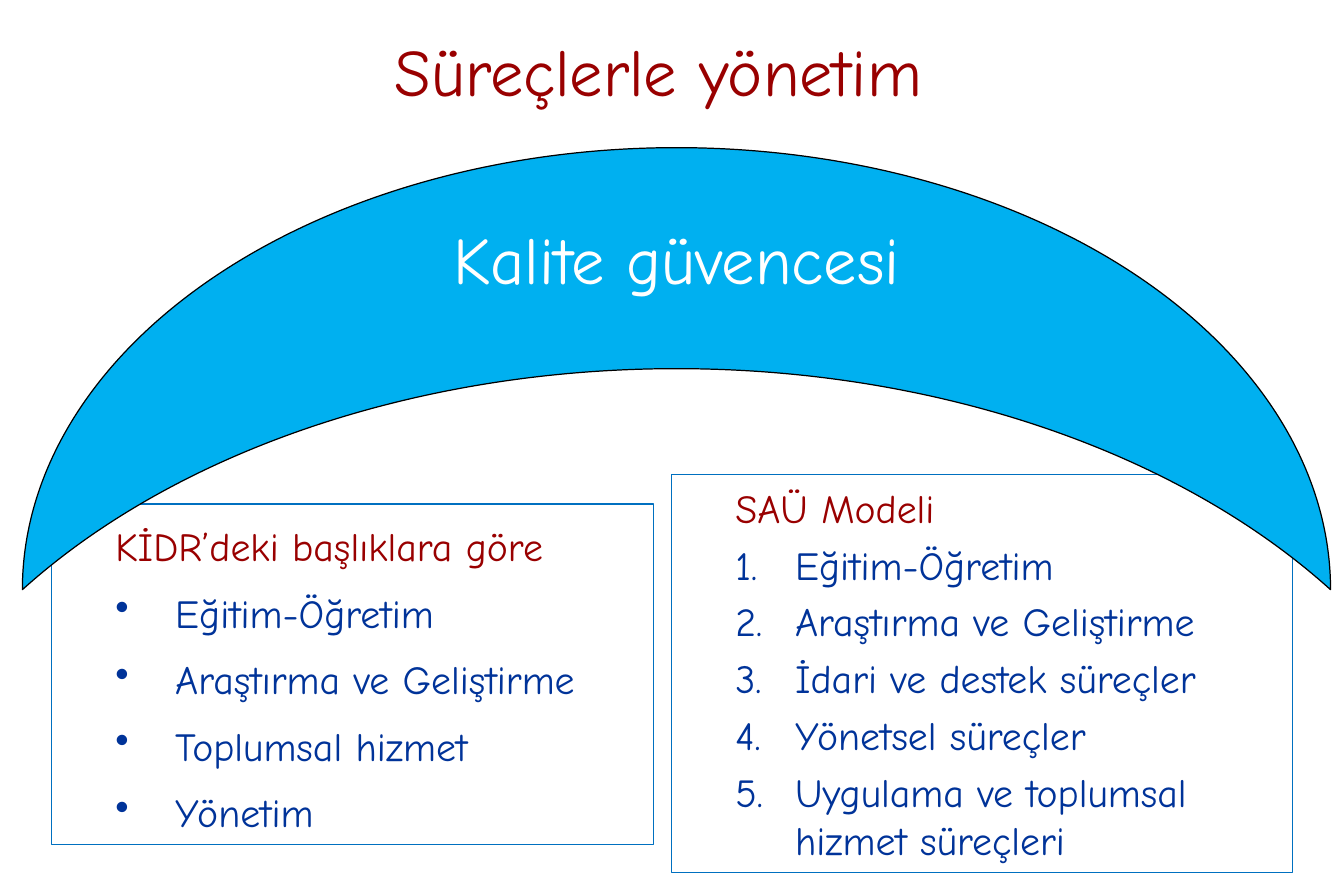
from lxml import etree
from pptx import Presentation
from pptx.dml.color import RGBColor
from pptx.enum.shapes import MSO_SHAPE
from pptx.enum.text import MSO_ANCHOR, PP_ALIGN
from pptx.oxml.ns import qn
from pptx.util import Pt

RECTANGLE, MOON = MSO_SHAPE.RECTANGLE, MSO_SHAPE.MOON
TOP, MIDDLE = MSO_ANCHOR.TOP, MSO_ANCHOR.MIDDLE
LEFT, CENTER = PP_ALIGN.LEFT, PP_ALIGN.CENTER

RED = RGBColor(0x99, 0x00, 0x00)
NAVY = RGBColor(0x00, 0x33, 0x99)
BLUE = RGBColor(0x00, 0x70, 0xC0)
SKY = RGBColor(0x00, 0xB0, 0xF0)
BLACK = RGBColor(0x00, 0x00, 0x00)
WHITE = RGBColor(0xFF, 0xFF, 0xFF)

BULLET = ("a:buChar", {"char": "•"})
NUMBER = ("a:buAutoNum", {"type": "arabicPeriod"})


class SlideBuilder:
    """Draws the elements of one slide in a shared style."""

    font = "Comic Neue"
    heading_size = Pt(40)
    list_size = Pt(24)
    line_width = Pt(0.75)
    list_margin = 31.5
    list_hang = 36

    def __init__(self, slide):
        self.slide = slide

    def style(self, para, size, color, align):
        para.alignment = align
        for span in para.runs:
            span.font.name = self.font
            span.font.size = size
            span.font.color.rgb = color

    def title(self, text, left, top, width, height):
        box = self.slide.shapes.title
        box.left, box.top, box.width, box.height = Pt(left), Pt(top), Pt(width), Pt(height)
        box.text_frame.text = text
        box.text_frame.vertical_anchor = MIDDLE
        self.style(box.text_frame.paragraphs[0], self.heading_size, RED, CENTER)

    def shape(self, kind, left, top, width, height, line, anchor):
        box = self.slide.shapes.add_shape(kind, Pt(left), Pt(top), Pt(width), Pt(height))
        box.shadow.inherit = False
        box.fill.background()
        box.line.color.rgb = line
        box.line.width = self.line_width
        box.text_frame.word_wrap = True
        box.text_frame.vertical_anchor = anchor
        return box

    def list_box(self, lines, marker, spacing, left, top, width, height):
        box = self.shape(RECTANGLE, left, top, width, height, BLUE, MIDDLE)
        frame = box.text_frame
        frame.text = "\n".join(lines)
        for index, para in enumerate(frame.paragraphs):
            self.style(para, self.list_size, NAVY if index else RED, LEFT)
            para.line_spacing = spacing
            para.space_before = Pt(5.5)
            hang = self.list_hang if index else 0
            properties = para._p.get_or_add_pPr()
            properties.set("marL", str(Pt(self.list_margin + hang)))
            properties.set("indent", str(Pt(-hang)))
            if index:
                tag, attributes = marker
                etree.SubElement(properties, qn(tag), attributes)

    def arch(self, text, left, top, width, height):
        box = self.shape(MOON, left, top, width, height, BLACK, TOP)
        box.rotation = 90
        box.fill.solid()
        box.fill.fore_color.rgb = SKY
        box.text_frame.text = text
        box.text_frame._txBody.bodyPr.set("vert", "vert270")
        self.style(box.text_frame.paragraphs[0], self.heading_size, WHITE, CENTER)


def main():
    deck = Presentation()
    deck.slide_width, deck.slide_height = Pt(810), Pt(540)
    builder = SlideBuilder(deck.slides.add_slide(deck.slide_layouts[5]))
    builder.title("Süreçlerle yönetim", 124.5, 0, 544.5, 84)
    builder.list_box(
        ["KİDR’deki başlıklara göre", "Eğitim-Öğretim", "Araştırma ve Geliştirme",
         "Toplumsal hizmet", "Yönetim"],
        BULLET, 1.2, 31, 303.8, 363, 205)
    builder.list_box(
        ["SAÜ Modeli", "Eğitim-Öğretim", "Araştırma ve Geliştirme",
         "İdari ve destek süreçler", "Yönetsel süreçler",
         "Uygulama ve toplumsal hizmet süreçleri"],
        NUMBER, 1.0, 404.6, 285.8, 374.4, 240)
    builder.arch("Kalite güvencesi", 274.5, -172, 266.4, 788.4)
    deck.save("out.pptx")


if __name__ == "__main__":
    main()
